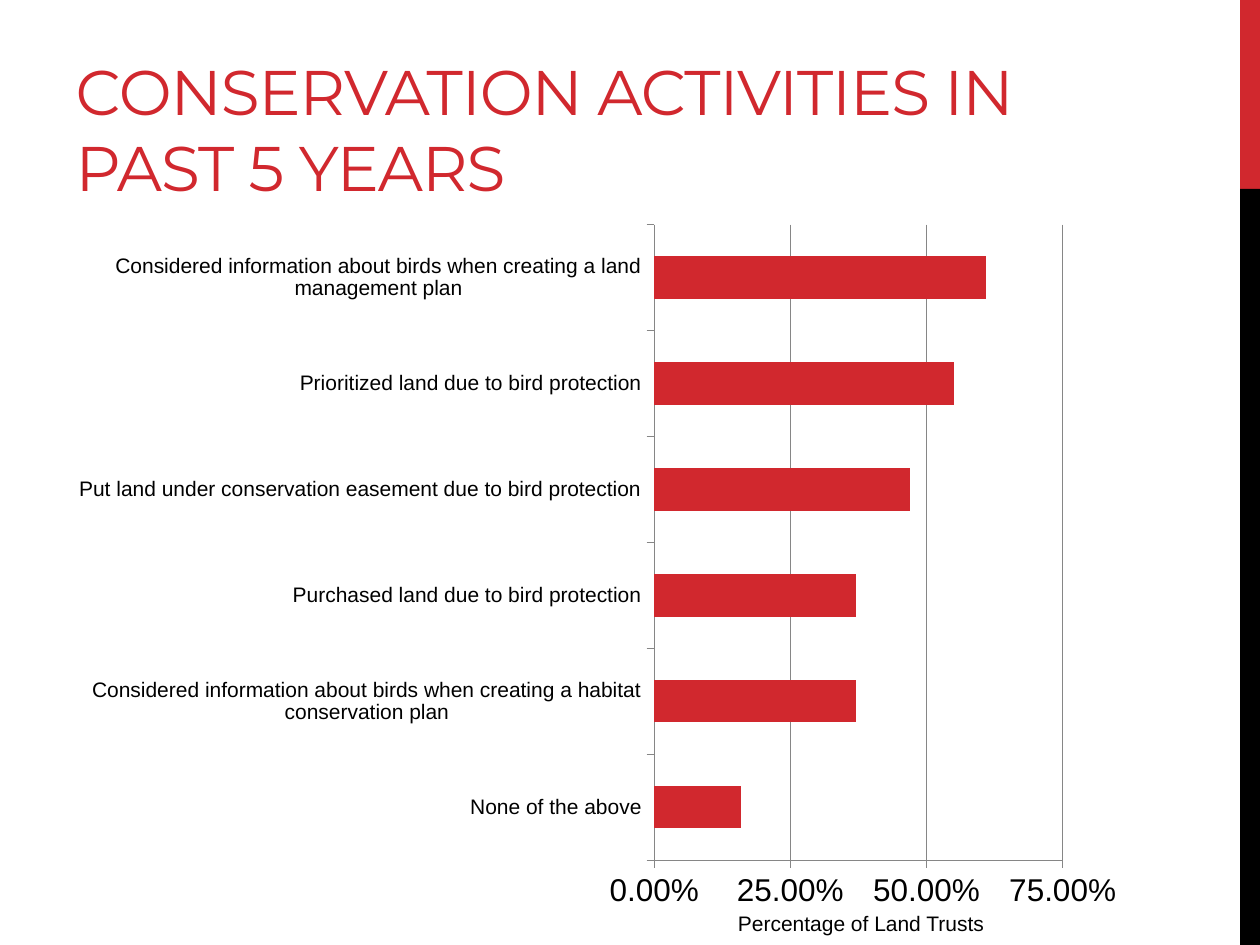
from lxml.etree import SubElement
from pptx import Presentation
from pptx.chart.data import CategoryChartData
from pptx.dml.color import RGBColor
from pptx.enum.chart import XL_CHART_TYPE as ChartType, XL_TICK_MARK as TickMark
from pptx.enum.shapes import MSO_SHAPE as Shape
from pptx.enum.text import MSO_ANCHOR as Anchor, MSO_AUTO_SIZE as AutoSize, PP_ALIGN as Align
from pptx.oxml.ns import qn
from pptx.util import Cm, Pt

RED = RGBColor(0xD1, 0x28, 0x2E)
BLACK = RGBColor(0, 0, 0)
GRAY = RGBColor(0x86, 0x86, 0x86)
WIDTH, HEIGHT = 25.4, 19.05
STRIPE_WIDTH, STRIPE_SPLIT = 0.4, 3.81
LEFT = 1.27
PLOT_LAYOUT = {"x": 0.55, "y": 0.02, "w": 0.38, "h": 0.89}
ACTIVITIES = {
    "None of the above": 0.16,
    "Considered information about birds when creating a habitat conservation plan": 0.37,
    "Purchased land due to bird protection": 0.37,
    "Put land under conservation easement due to bird protection": 0.47,
    "Prioritized land due to bird protection": 0.55,
    "Considered information about birds when creating a land management plan": 0.61,
}


class SlideBuilder:
    """Hold the fonts and the current slide, and add styled elements to it."""

    heading_font = "Montserrat"
    body_font = "Arial"

    def __init__(self, page):
        self.page = page

    def style(self, font, name, size, color):
        font.name, font.size, font.bold = name, Pt(size), False
        font.color.rgb = color

    def stripe(self, top, height, color):
        box = self.page.shapes.add_shape(
            Shape.RECTANGLE, Cm(WIDTH - STRIPE_WIDTH), Cm(top), Cm(STRIPE_WIDTH), Cm(height))
        box.shadow.inherit = False
        box.fill.solid()
        box.fill.fore_color.rgb = color
        box.line.fill.background()

    def title(self, text, left, top, width, height):
        box = self.page.shapes.title
        box.left, box.top, box.width, box.height = map(Cm, (left, top, width, height))
        frame = box.text_frame
        frame.text = text
        frame.word_wrap = True
        frame.auto_size = AutoSize.NONE
        frame.vertical_anchor = Anchor.BOTTOM
        para = frame.paragraphs[0]
        para.alignment = Align.LEFT
        span = para.runs[0]
        self.style(span.font, self.heading_font, 36, RED)
        span.font._element.set("spc", "-60")

    def caption(self, text, left, top, width, height):
        box = self.page.shapes.add_textbox(*map(Cm, (left, top, width, height)))
        frame = box.text_frame
        frame.text = text
        frame.word_wrap = True
        frame.auto_size = AutoSize.SHAPE_TO_FIT_TEXT
        para = frame.paragraphs[0]
        para.alignment = Align.CENTER
        self.style(para.runs[0].font, self.body_font, 12, BLACK)

    def bar_chart(self, values, left, top, width, height):
        data = CategoryChartData(number_format="0.00%")
        data.categories = list(values)
        data.add_series("Series 1", list(values.values()))
        chart = self.page.shapes.add_chart(
            ChartType.BAR_CLUSTERED, *map(Cm, (left, top, width, height)), data).chart
        chart.has_legend = chart.has_title = False
        self.style(chart.font, self.body_font, 18, BLACK)
        plot = chart.plots[0]
        plot.gap_width = 150
        plot.vary_by_categories = False
        fill = plot.series[0].format.fill
        fill.solid()
        fill.fore_color.rgb = RED
        for axis, size in ((chart.category_axis, 12), (chart.value_axis, 18)):
            axis.major_tick_mark = TickMark.OUTSIDE
            axis.minor_tick_mark = TickMark.NONE
            axis.format.line.color.rgb = GRAY
            self.style(axis.tick_labels.font, self.body_font, size, BLACK)
        axis = chart.value_axis
        axis.minimum_scale, axis.maximum_scale, axis.major_unit = 0, 0.75, 0.25
        axis.has_major_gridlines = True
        axis.major_gridlines.format.line.color.rgb = GRAY
        axis.tick_labels.number_format = "0.00%"
        axis.tick_labels.number_format_is_linked = False
        self.place_plot(chart)

    def place_plot(self, chart):
        area = chart._chartSpace.find(".//" + qn("c:plotArea"))
        for old in area.findall(qn("c:layout")):
            area.remove(old)
        layout = SubElement(area, qn("c:layout"))
        area.insert(0, layout)
        manual = SubElement(layout, qn("c:manualLayout"))
        settings = {"layoutTarget": "inner", "xMode": "edge", "yMode": "edge", **PLOT_LAYOUT}
        for name, value in settings.items():
            SubElement(manual, qn("c:" + name)).set("val", str(value))


def main():
    deck = Presentation()
    deck.slide_width, deck.slide_height = Cm(WIDTH), Cm(HEIGHT)
    builder = SlideBuilder(deck.slides.add_slide(deck.slide_layouts[5]))
    builder.stripe(0, STRIPE_SPLIT, RED)
    builder.stripe(STRIPE_SPLIT, HEIGHT - STRIPE_SPLIT, BLACK)
    builder.title("CONSERVATION ACTIVITIES IN PAST 5 YEARS", LEFT, 0.43, 19.86, 3.81)
    builder.bar_chart(ACTIVITIES, LEFT, 4.24, 21.67, 14.4)
    builder.caption("Percentage of Land Trusts", 12.09, 18.24, 10.54, 0.81)
    deck.save("out.pptx")


if __name__ == "__main__":
    main()
